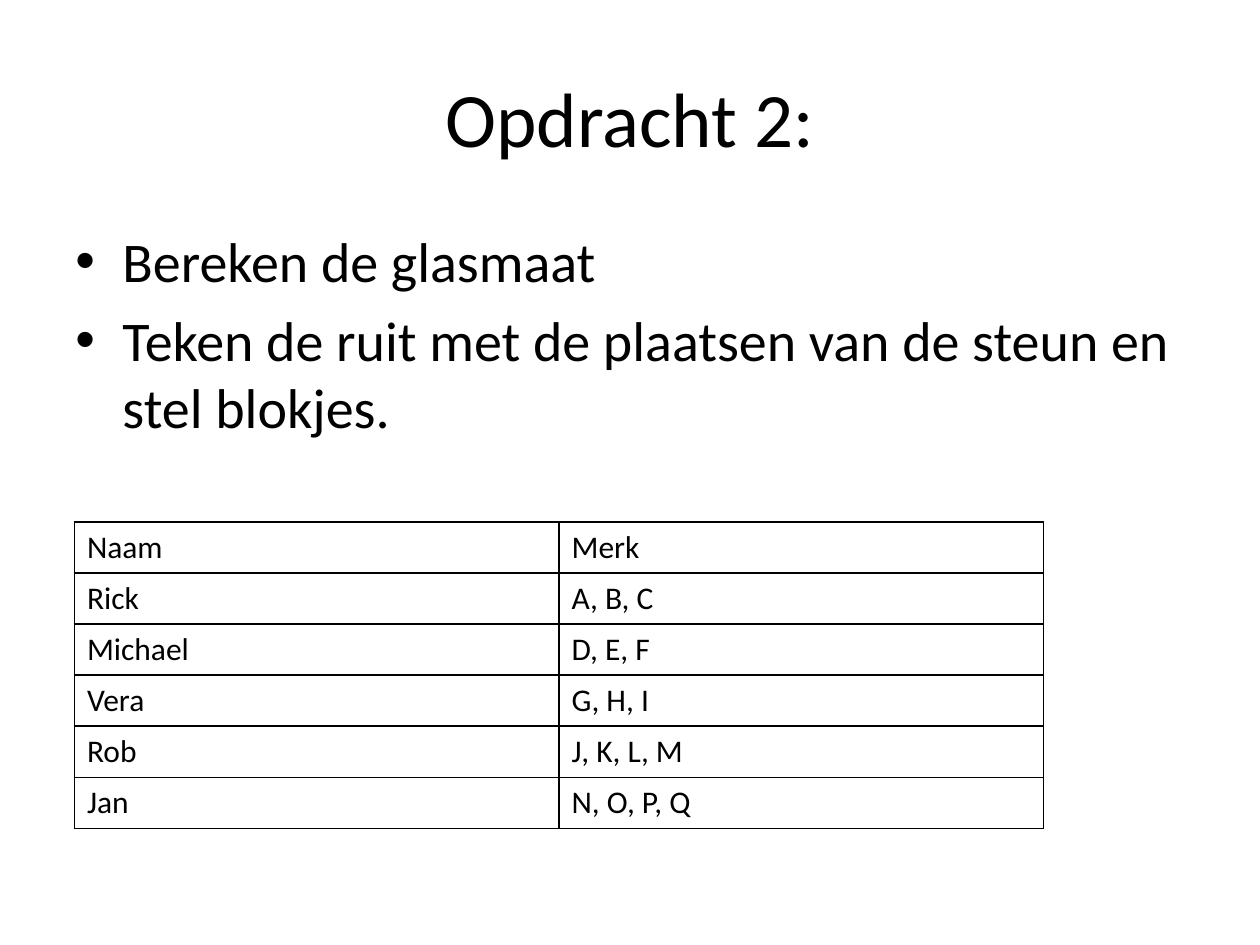
from lxml import etree
from pptx import Presentation
from pptx.dml.color import RGBColor
from pptx.enum.text import MSO_ANCHOR, PP_ALIGN
from pptx.oxml.ns import qn
from pptx.util import Cm, Pt

BLACK = RGBColor(0x00, 0x00, 0x00)
FACE = "Calibri"
MIDDLE = MSO_ANCHOR.MIDDLE
CENTER = PP_ALIGN.CENTER
LEFT = PP_ALIGN.LEFT


def write(para, text, size):
    run = para.add_run()
    run.text = text
    run.font.name = FACE
    run.font.size = Pt(size)
    run.font.color.rgb = BLACK


deck = Presentation()
deck.slide_width = Cm(25.4)
deck.slide_height = Cm(19.05)
slide = deck.slides.add_slide(deck.slide_layouts[6])

title = slide.shapes.add_textbox(Cm(1.27), Cm(0.76), Cm(22.86), Cm(3.18)).text_frame
title.word_wrap = True
title.vertical_anchor = MIDDLE
title.paragraphs[0].alignment = CENTER
write(title.paragraphs[0], "Opdracht 2:", 44)

body = slide.shapes.add_textbox(Cm(1.27), Cm(4.45), Cm(22.86), Cm(12.57)).text_frame
body.word_wrap = True
tasks = [
    "Bereken de glasmaat",
    "Teken de ruit met de plaatsen van de steun en stel blokjes.",
]
for i, task in enumerate(tasks):
    para = body.add_paragraph() if i else body.paragraphs[0]
    props = para._p.get_or_add_pPr()
    props.set("marL", str(Cm(0.95)))
    props.set("indent", str(-Cm(0.95)))
    etree.SubElement(props, qn("a:buFont"), typeface="Arial")
    etree.SubElement(props, qn("a:buChar"), char="•")
    para.alignment = LEFT
    if i:
        para.space_before = Pt(6.4)
    write(para, task, 32)

rows = [
    ("Naam", "Merk"),
    ("Rick", "A, B, C"),
    ("Michael", "D, E, F"),
    ("Vera", "G, H, I"),
    ("Rob", "J, K, L, M"),
    ("Jan", "N, O, P, Q"),
]
table = slide.shapes.add_table(
    len(rows), 2, Cm(1.5), Cm(10.52), Cm(19.54), Cm(6.18)
).table
table.first_row = False
table.horz_banding = False
for col in table.columns:
    col.width = Cm(9.77)
for r, row in enumerate(rows):
    table.rows[r].height = Cm(1.03)
    for c, text in enumerate(row):
        cell = table.cell(r, c)
        write(cell.text_frame.paragraphs[0], text, 18)
        props = cell._tc.get_or_add_tcPr()
        for side in ("lnL", "lnR", "lnT", "lnB"):
            edge = etree.SubElement(props, qn(f"a:{side}"), w=str(Pt(1)))
            fill = etree.SubElement(edge, qn("a:solidFill"))
            etree.SubElement(fill, qn("a:srgbClr"), val=str(BLACK))
        cell.fill.background()

deck.save("out.pptx")
